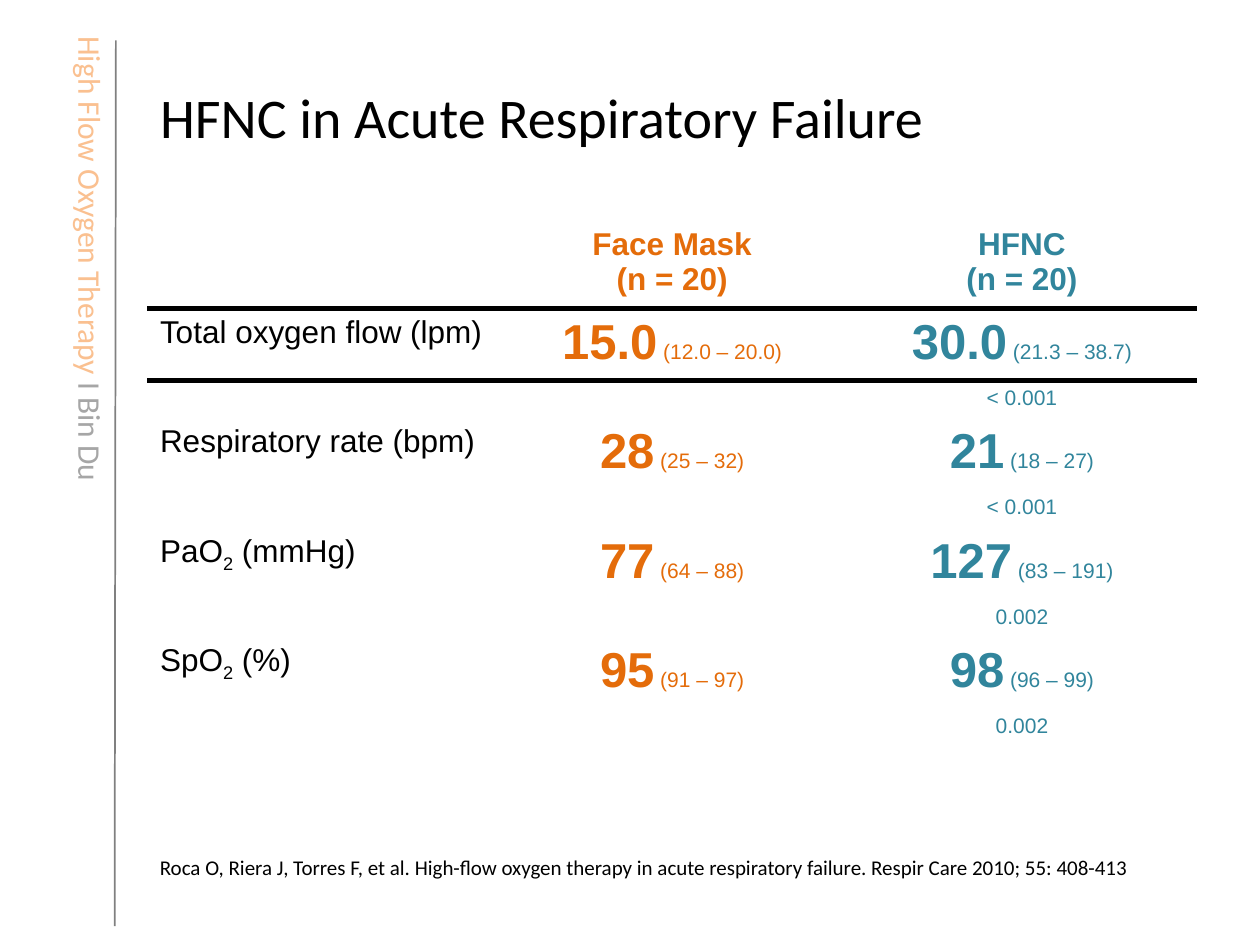
"""Build a slide comparing face mask and HFNC in acute respiratory failure."""
from dataclasses import dataclass

from lxml import etree
from pptx import Presentation
from pptx.dml.color import RGBColor
from pptx.enum.shapes import MSO_CONNECTOR
from pptx.enum.text import MSO_ANCHOR, MSO_AUTO_SIZE, PP_ALIGN
from pptx.oxml.ns import qn
from pptx.util import Inches, Pt

LEFT, CENTER = PP_ALIGN.LEFT, PP_ALIGN.CENTER
MIDDLE = MSO_ANCHOR.MIDDLE
FIT_SHAPE, NO_FIT = MSO_AUTO_SIZE.SHAPE_TO_FIT_TEXT, MSO_AUTO_SIZE.NONE
STRAIGHT = MSO_CONNECTOR.STRAIGHT

COLORS = {
    "text": "000000",
    "mask": "E46C0A",
    "hfnc": "31859C",
    "topic": "FAC090",
    "author": "A6A6A6",
    "margin": "808080",
}
NO_GRID_STYLE = "{2D5ABB26-0587-4C30-8999-92F81FD0307C}"
CONTENT_LEFT, CONTENT_WIDTH = 1.17, 8.33
HEADER_HEIGHT, VALUE_HEIGHT, P_HEIGHT = 0.65, 0.55, 0.29


@dataclass
class Piece:
    """A run of text with its format."""

    text: str
    size: float
    color: str = "text"
    bold: bool = False
    font: str = "Arial"
    baseline: int = 0


@dataclass
class Measure:
    """One outcome with its median and range in each group."""

    label: list[str]
    mask: tuple[str, str]
    hfnc: tuple[str, str]
    p_value: str


MEASURES = [
    Measure(["Total oxygen flow (lpm)"], ("15.0", "12.0 – 20.0"), ("30.0", "21.3 – 38.7"), "< 0.001"),
    Measure(["Respiratory rate (bpm)"], ("28", "25 – 32"), ("21", "18 – 27"), "< 0.001"),
    Measure(["PaO", "2", " (mmHg)"], ("77", "64 – 88"), ("127", "83 – 191"), "0.002"),
    Measure(["SpO", "2", " (%)"], ("95", "91 – 97"), ("98", "96 – 99"), "0.002"),
]


def write(paragraph, pieces: list[Piece], align=LEFT) -> None:
    """Fill a paragraph with formatted runs."""
    paragraph.alignment = align
    for piece in pieces:
        run = paragraph.add_run()
        run.text = piece.text
        formats = {"name": piece.font, "size": Pt(piece.size), "bold": piece.bold}
        for attribute, value in formats.items():
            setattr(run.font, attribute, value)
        run.font.color.rgb = RGBColor.from_string(COLORS[piece.color])
        if piece.baseline:
            run.font._element.set("baseline", str(piece.baseline * 1000))


def add_note(slide, box: tuple, pieces: list[Piece], wrap: bool, rotation: float = 0) -> None:
    """Add a text box that fits its text."""
    note = slide.shapes.add_textbox(*map(Inches, box))
    note.rotation = rotation
    note.text_frame.word_wrap = wrap
    note.text_frame.auto_size = FIT_SHAPE
    write(note.text_frame.paragraphs[0], pieces)


def add_margin_line(slide) -> None:
    """Draw the rule beside the running title."""
    rule = slide.shapes.add_connector(STRAIGHT, *map(Inches, (0.92, 0.32, 0.91, 7.35)))
    rule.line.color.rgb = RGBColor.from_string(COLORS["margin"])
    rule.line.width = Pt(1)
    etree.SubElement(rule._element.spPr, qn("a:effectLst"))


def set_border(cell, side: str) -> None:
    """Give one side of a cell a heavy black line."""
    border = etree.Element(qn(f"a:{side}"), w=str(Pt(3)))
    fill = etree.SubElement(border, qn("a:solidFill"))
    etree.SubElement(fill, qn("a:srgbClr"), val=COLORS["text"])
    cell._tc.get_or_add_tcPr().insert(0, border)


def label_pieces(parts: list[str]) -> list[Piece]:
    """Format a row label, with every second part as subscript."""
    return [Piece(part, 18, baseline=-25 * (i % 2)) for i, part in enumerate(parts)]


def value_pieces(value: tuple[str, str], color: str) -> list[Piece]:
    """Format a median followed by its range."""
    median, spread = value
    return [Piece(median, 28, color, True), Piece(f" ({spread})", 12, color)]


def add_results(slide) -> None:
    """Add the table of outcomes."""
    heights = [HEADER_HEIGHT] + [VALUE_HEIGHT, P_HEIGHT] * len(MEASURES)
    frame = slide.shapes.add_table(
        len(heights), 3, Inches(CONTENT_LEFT), Inches(1.75), Inches(CONTENT_WIDTH), Inches(sum(heights))
    )
    results = frame.table
    results.first_row = results.horz_banding = False
    results._tbl.tblPr.find(qn("a:tableStyleId")).text = NO_GRID_STYLE
    for row, height in zip(results.rows, heights):
        row.height = Inches(height)
    for column, (name, color) in enumerate((("Face Mask", "mask"), ("HFNC", "hfnc")), start=1):
        header = results.cell(0, column).text_frame
        write(header.paragraphs[0], [Piece(name, 18, color, True)], CENTER)
        write(header.add_paragraph(), [Piece("(n = 20)", 18, color, True)], CENTER)
    for i, measure in enumerate(MEASURES):
        top = 1 + 2 * i
        entries = [
            (top, 0, label_pieces(measure.label), LEFT),
            (top, 1, value_pieces(measure.mask, "mask"), CENTER),
            (top, 2, value_pieces(measure.hfnc, "hfnc"), CENTER),
            (top + 1, 2, [Piece(measure.p_value, 12, "hfnc")], CENTER),
        ]
        for row, column, pieces, align in entries:
            write(results.cell(row, column).text_frame.paragraphs[0], pieces, align)
    for cell in results.iter_cells():
        cell.fill.background()
        if not cell.text:
            etree.SubElement(cell.text_frame.paragraphs[0]._p, qn("a:endParaRPr"), sz="1200")
    for column in range(3):
        set_border(results.cell(0, column), "lnB")
        set_border(results.cell(1, column), "lnT")


def add_title(slide) -> None:
    """Place and fill the title."""
    title = slide.shapes.title
    box = {"left": CONTENT_LEFT, "top": 0.3, "width": CONTENT_WIDTH, "height": 1.25}
    for attribute, value in box.items():
        setattr(title, attribute, Inches(value))
    title.text_frame.auto_size = NO_FIT
    title.text_frame.vertical_anchor = MIDDLE
    heading = Piece("HFNC in Acute Respiratory Failure", 32, font="Calibri")
    write(title.text_frame.paragraphs[0], [heading])


def main() -> None:
    """Build and save the slide."""
    deck = Presentation()
    deck.slide_width, deck.slide_height = Inches(10), Inches(7.5)
    slide = deck.slides.add_slide(deck.slide_layouts[5])
    add_margin_line(slide)
    running_title = [
        Piece("High Flow Oxygen Therapy ", 18, "topic", font="Calibri"),
        Piece("Ι Bin Du", 18, "author", font="Calibri"),
    ]
    add_note(slide, (-1.17, 1.88, 3.78, 0.4), running_title, wrap=False, rotation=90)
    add_title(slide)
    add_results(slide)
    citation = (
        "Roca O, Riera J, Torres F, et al. High-flow oxygen therapy in acute "
        "respiratory failure. Respir Care 2010; 55: 408-413"
    )
    add_note(
        slide, (CONTENT_LEFT, 6.73, CONTENT_WIDTH, 0.3), [Piece(citation, 12, font="Calibri")], wrap=True
    )
    deck.save("out.pptx")


if __name__ == "__main__":
    main()
